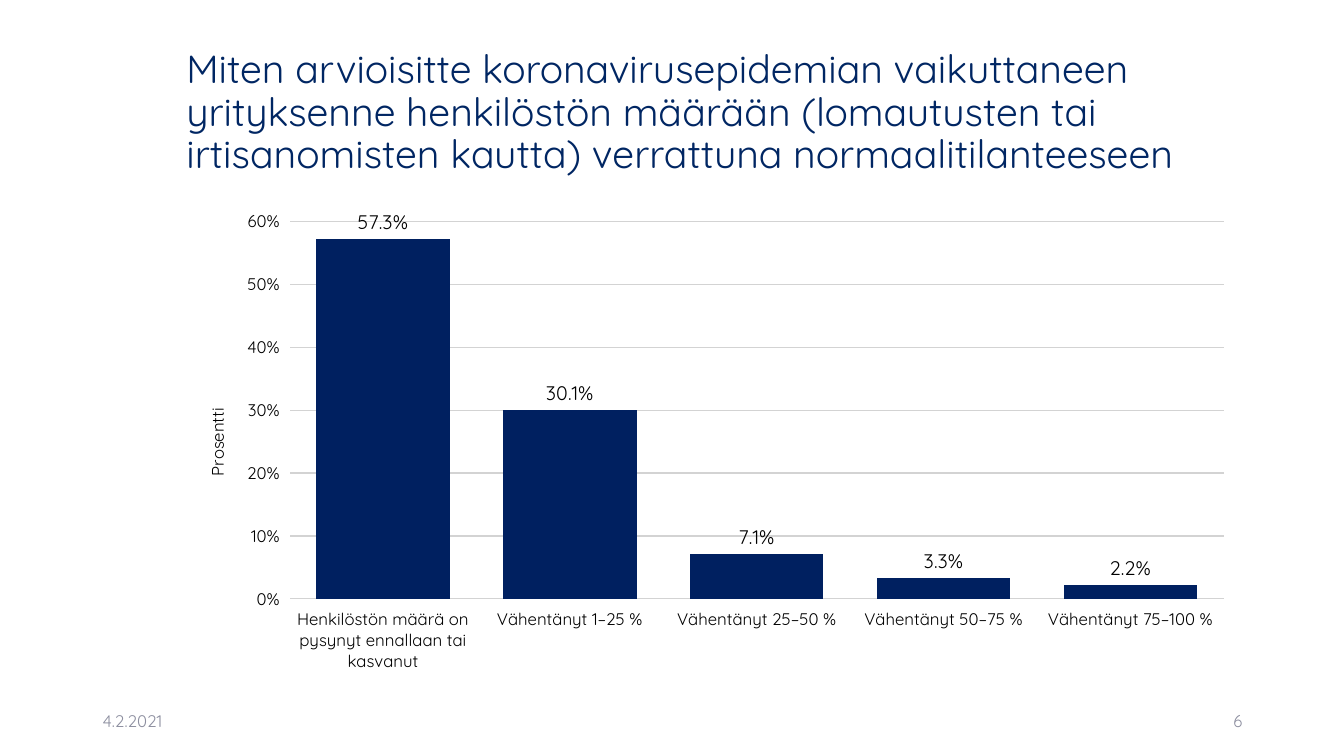
import pptx
import pptx.chart.data
import pptx.dml.color
import pptx.enum.chart
import pptx.enum.text
import pptx.oxml
import pptx.oxml.ns
import pptx.util

Inches = pptx.util.Inches
Pt = pptx.util.Pt
RGBColor = pptx.dml.color.RGBColor
ALIGN = pptx.enum.text.PP_ALIGN

FONT = "Quicksand"
TITLE_BLUE = RGBColor(0x00, 0x26, 0x63)
BAR_BLUE = RGBColor(0x00, 0x20, 0x60)
FOOTER_GREY = RGBColor(0x8C, 0x8E, 0x9F)
GRID_GREY = RGBColor(0xD3, 0xD3, 0xD3)
BLACK = RGBColor(0, 0, 0)
WHITE = RGBColor(255, 255, 255)

# text, (left, top, width, height), size, colour, paragraph format
TEXTS = [
    ("Miten arvioisitte koronavirusepidemian vaikuttaneen yrityksenne henkilöstön "
     "määrään (lomautusten tai irtisanomisten kautta) verrattuna normaalitilanteeseen",
     (1.75, 0.4, 10.59, 1.45), 28, TITLE_BLUE, {"line_spacing": 0.9}),
    ("4.2.2021", (0.92, 6.95, 3, 0.4), 12, FOOTER_GREY, {"alignment": ALIGN.LEFT}),
    ("6", (9.42, 6.95, 3, 0.4), 12, FOOTER_GREY, {"alignment": ALIGN.RIGHT}),
]
SHARES = {
    "Henkilöstön määrä on pysynyt ennallaan tai kasvanut": 0.573,
    "Vähentänyt 1–25 %": 0.301,
    "Vähentänyt 25–50 %": 0.071,
    "Vähentänyt 50–75 %": 0.033,
    "Vähentänyt 75–100 %": 0.022,
}
AXIS_TITLE = "Prosentti"
CHART_AREA = (1.75, 2, 10.59, 4.76)
PLOT_AREA = (2.87, 2.2, 9.27, 3.74)
AXIS_TITLE_CORNER = (2.0, 4.02)


def set_all(target, values):
    for name, value in values.items():
        setattr(target, name, value)


def set_font(font, size, color=BLACK):
    set_all(font, {"name": FONT, "size": Pt(size), "bold": False})
    font.color.rgb = color


def add_text(page, text, area, size, color, para_format):
    box = page.shapes.add_textbox(*map(Inches, area))
    set_all(box.text_frame, {"word_wrap": True,
                             "vertical_anchor": pptx.enum.text.MSO_ANCHOR.MIDDLE})
    para = box.text_frame.paragraphs[0]
    set_all(para, para_format)
    span = para.add_run()
    span.text = text
    set_font(span.font, size, color)


def place(element, area, index, target=""):
    """Fix a chart part at a slide position, given in inches."""
    for old in element.findall(pptx.oxml.ns.qn("c:layout")):
        element.remove(old)
    left, top, width, height = CHART_AREA
    origins, extents = (left, top, 0, 0), (width, height, width, height)
    parts = list(zip("xywh", area, origins, extents))
    modes = "".join(f'<c:{key}Mode val="edge"/>' for key, *_ in parts[:2])
    values = "".join(f'<c:{key} val="{(value - origin) / extent:.3f}"/>'
                     for key, value, origin, extent in parts)
    element.insert(index, pptx.oxml.parse_xml(
        f'<c:layout {pptx.oxml.ns.nsdecls("c")}><c:manualLayout>'
        f'{target}{modes}{values}</c:manualLayout></c:layout>'))


def add_share_chart(page):
    data = pptx.chart.data.CategoryChartData(number_format="0.0%")
    data.categories = list(SHARES)
    data.add_series("Series 1", list(SHARES.values()))
    kind = pptx.enum.chart.XL_CHART_TYPE.COLUMN_CLUSTERED
    chart = page.shapes.add_chart(kind, *map(Inches, CHART_AREA), data).chart
    set_all(chart, {"has_legend": False, "has_title": False})
    set_font(chart.font, 11)

    plot = chart.plots[0]
    set_all(plot, {"gap_width": 40, "vary_by_categories": False,
                   "has_data_labels": True})
    set_all(plot.data_labels, {
        "show_value": True, "number_format": "0.0%", "number_format_is_linked": False,
        "position": pptx.enum.chart.XL_LABEL_POSITION.OUTSIDE_END})
    set_font(plot.data_labels.font, 14)
    bars = plot.series[0].format.fill
    bars.solid()
    bars.fore_color.rgb = BAR_BLUE

    for axis in (chart.category_axis, chart.value_axis):
        axis.major_tick_mark = pptx.enum.chart.XL_TICK_MARK.OUTSIDE
        axis.format.line.fill.background()
        set_font(axis.tick_labels.font, 12)
    shares = chart.value_axis
    set_all(shares, {"minimum_scale": 0, "maximum_scale": 0.6, "major_unit": 0.1,
                     "has_major_gridlines": True, "has_title": True})
    set_all(shares.tick_labels, {"number_format": "0%", "number_format_is_linked": False})
    grid = shares.major_gridlines.format.line
    grid.width = Pt(1)
    grid.color.rgb = GRID_GREY

    frame = shares.axis_title.text_frame
    span = frame.paragraphs[0].add_run()
    span.text = AXIS_TITLE
    set_font(span.font, 12)
    qn = pptx.oxml.ns.qn
    title = shares._element.find(qn("c:title"))
    title.find(".//" + qn("a:bodyPr")).set("rot", "-5400000")
    place(title, AXIS_TITLE_CORNER, 1)

    plot_area = chart._chartSpace.find(".//" + qn("c:plotArea"))
    place(plot_area, PLOT_AREA, 0, '<c:layoutTarget val="inner"/>')
    plot_area.append(pptx.oxml.parse_xml(
        f'<c:spPr {pptx.oxml.ns.nsdecls("c", "a")}><a:solidFill>'
        f'<a:srgbClr val="{WHITE}"/></a:solidFill></c:spPr>'))


def main():
    deck = pptx.Presentation()
    set_all(deck, {"slide_width": Inches(13.33), "slide_height": Inches(7.5)})
    page = deck.slides.add_slide(deck.slide_layouts[6])
    for entry in TEXTS:
        add_text(page, *entry)
    add_share_chart(page)
    deck.save("out.pptx")


if __name__ == "__main__":
    main()
